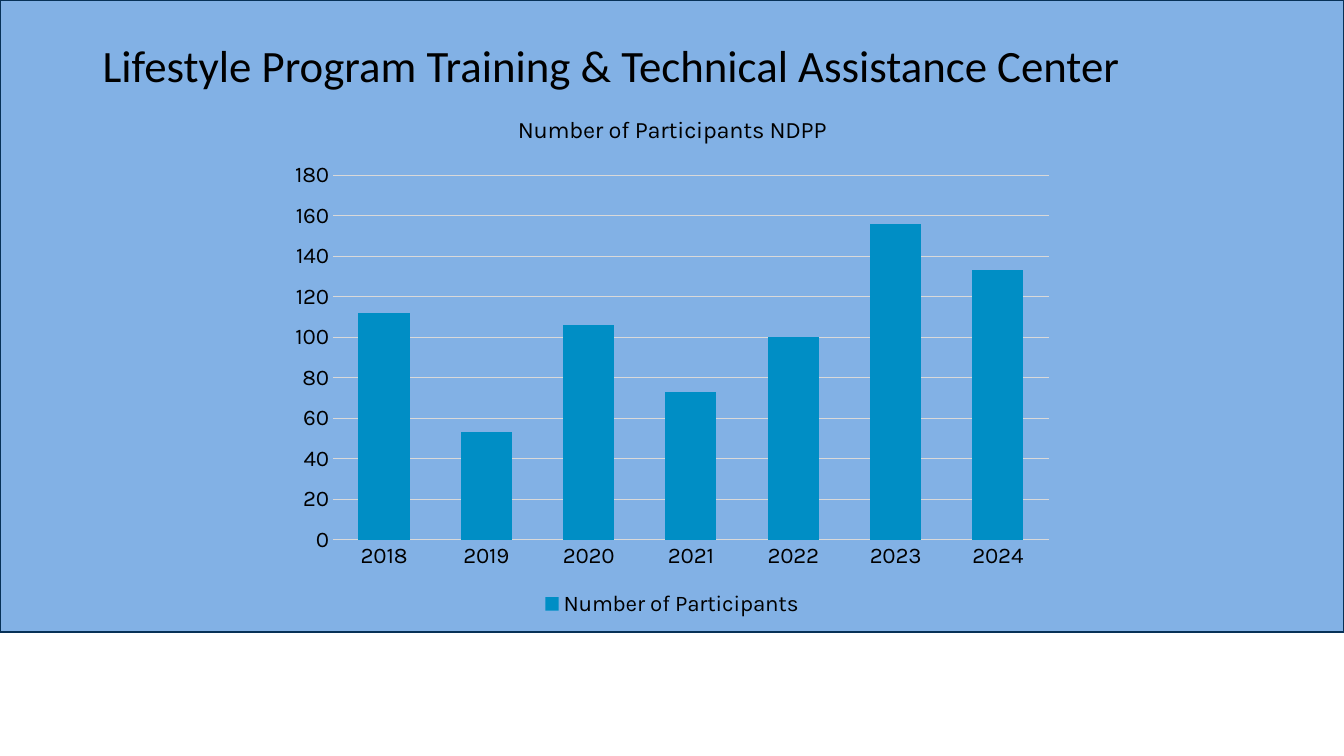
from pptx import Presentation
from pptx import util as u
from pptx.chart.data import CategoryChartData
from pptx.dml.color import RGBColor
from pptx.enum import chart as ch, shapes, text

BLACK, GRID_GREY = "000000", "D9D9D9"
PARTICIPANTS = {"2018": 112, "2019": 53, "2020": 106, "2021": 73,
                "2022": 100, "2023": 156, "2024": 133}


def rgb(value):
    return RGBColor.from_string(value)


def set_font(font, name, size, color=BLACK):
    font.name = name
    font.size = u.Pt(size)
    font.bold = False
    font.color.rgb = rgb(color)


def set_line(line, color, width):
    line.color.rgb = rgb(color)
    line.width = u.Pt(width)


def inches(*lengths):
    return [u.Inches(length) for length in lengths]


def add_panel(slide, box, fill, line):
    panel = slide.shapes.add_shape(shapes.MSO_SHAPE.RECTANGLE, *inches(*box))
    panel.shadow.inherit = False
    panel.fill.solid()
    panel.fill.fore_color.rgb = rgb(fill)
    set_line(panel.line, line, 0.85)


def add_heading(slide, box, wording):
    frame = slide.shapes.add_textbox(*inches(*box)).text_frame
    frame.word_wrap = True
    frame.vertical_anchor = text.MSO_ANCHOR.MIDDLE
    heading = frame.paragraphs[0]
    heading.text = wording
    heading.line_spacing = 0.9
    set_font(heading.font, "Calibri", 32)


def style_axis(axis):
    axis.major_tick_mark = axis.minor_tick_mark = ch.XL_TICK_MARK.NONE
    set_font(axis.tick_labels.font, "Karla", 16)


def add_column_chart(slide, box, title, series_name, values, color):
    data = CategoryChartData()
    data.categories = list(values)
    data.add_series(series_name, list(values.values()))
    chart = slide.shapes.add_chart(
        ch.XL_CHART_TYPE.COLUMN_CLUSTERED, *inches(*box), data).chart
    set_font(chart.font, "Karla", 14)

    chart.has_title = True
    chart.chart_title.include_in_layout = False
    chart_title = chart.chart_title.text_frame.paragraphs[0]
    chart_title.text = title
    set_font(chart_title.font, "Karla", 16.8)

    chart.has_legend = True
    chart.legend.position = ch.XL_LEGEND_POSITION.BOTTOM
    chart.legend.include_in_layout = False
    set_font(chart.legend.font, "Karla", 16)

    years, counts = chart.category_axis, chart.value_axis
    style_axis(years)
    set_line(years.format.line, GRID_GREY, 1)
    style_axis(counts)
    counts.format.line.fill.background()
    counts.minimum_scale, counts.maximum_scale, counts.major_unit = 0, 180, 20
    set_line(counts.major_gridlines.format.line, GRID_GREY, 0.75)

    plot = chart.plots[0]
    plot.gap_width = 100
    plot.overlap = -24
    plot.vary_by_categories = False
    columns = plot.series[0].format.fill
    columns.solid()
    columns.fore_color.rgb = rgb(color)


def main():
    deck = Presentation()
    deck.slide_width, deck.slide_height = inches(13.33, 7.5)
    slide = deck.slides.add_slide(deck.slide_layouts[6])
    add_panel(slide, (0, 0, 13.33, 6.27), "82B1E5", "073157")
    add_heading(slide, (0.92, 0.4, 11.5, 0.54),
                "Lifestyle Program Training & Technical Assistance Center")
    add_column_chart(slide, (2.77, 0.94, 7.79, 5.22),
                     "Number of Participants NDPP", "Number of Participants",
                     PARTICIPANTS, "008EC5")
    deck.save("out.pptx")


if __name__ == "__main__":
    main()
